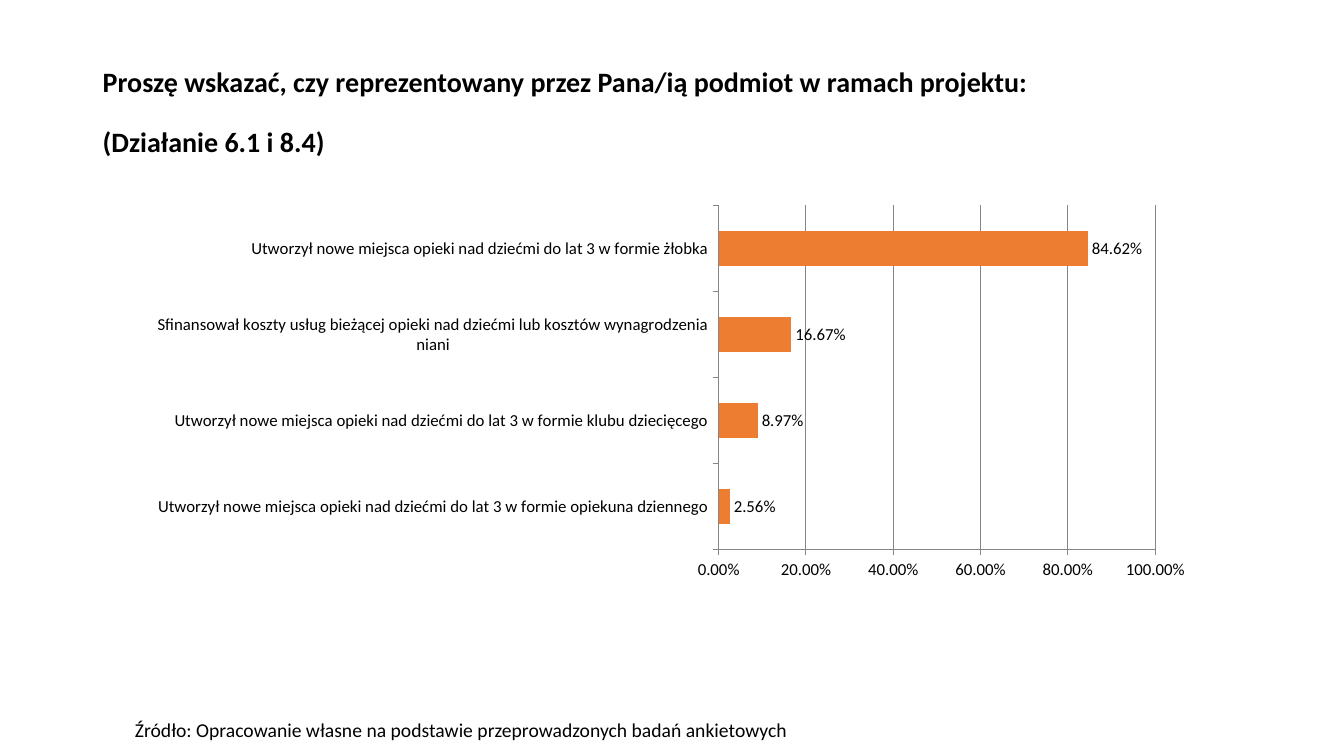
from lxml import etree
from pptx import Presentation
from pptx.chart.data import CategoryChartData
from pptx.dml.color import RGBColor
from pptx.enum.chart import XL_CHART_TYPE, XL_LABEL_POSITION, XL_TICK_MARK
from pptx.enum.text import MSO_ANCHOR
from pptx.oxml.ns import qn
from pptx.util import Inches, Pt

BAR_CLUSTERED = XL_CHART_TYPE.BAR_CLUSTERED
OUTSIDE_END = XL_LABEL_POSITION.OUTSIDE_END
TICK_OUTSIDE = XL_TICK_MARK.OUTSIDE
ANCHOR_TOP, ANCHOR_MIDDLE = MSO_ANCHOR.TOP, MSO_ANCHOR.MIDDLE

FONT = "Calibri"
BLACK, ORANGE, GREY = "000000", "ED7D31", "868686"
PERCENT = "0.00%"

TITLE = [
    "Proszę wskazać, czy reprezentowany przez Pana/ią podmiot w ramach projektu:",
    "(Działanie 6.1 i 8.4)",
]
SOURCE_NOTE = ["Źródło: Opracowanie własne na podstawie przeprowadzonych badań ankietowych"]
# Bars run from the bottom up
ANSWERS = {
    "Utworzył nowe miejsca opieki nad dziećmi do lat 3 w formie opiekuna dziennego": 0.0256,
    "Utworzył nowe miejsca opieki nad dziećmi do lat 3 w formie klubu dziecięcego": 0.0897,
    "Sfinansował koszty usług bieżącej opieki nad dziećmi lub kosztów wynagrodzenia niani": 0.1667,
    "Utworzył nowe miejsca opieki nad dziećmi do lat 3 w formie żłobka": 0.8462,
}
# Inner plot area as shares of the chart frame
PLOT_LAYOUT = {"x": 0.55, "y": 0.02, "w": 0.41, "h": 0.88}


def color(hex_code):
    return RGBColor.from_string(hex_code)


def style_font(font, size, bold=False):
    font.name = FONT
    font.size = Pt(size)
    font.bold = bold
    font.color.rgb = color(BLACK)


def add_text(page, left, top, width, height, lines, size,
             bold=False, anchor=ANCHOR_TOP, gap=0):
    box = page.shapes.add_textbox(Inches(left), Inches(top), Inches(width), Inches(height))
    frame = box.text_frame
    frame.word_wrap = True
    frame.vertical_anchor = anchor
    for index, line in enumerate(lines):
        para = frame.add_paragraph() if index else frame.paragraphs[0]
        para.text = line
        para.line_spacing = 0.9
        para.space_before = Pt(gap if index else 0)
        style_font(para.font, size, bold)


def set_plot_layout(chart):
    plot_area = chart.plots[0]._element.getparent()
    for old_layout in plot_area.findall(qn("c:layout")):
        plot_area.remove(old_layout)
    layout = etree.Element(qn("c:layout"))
    manual = etree.SubElement(layout, qn("c:manualLayout"))
    settings = {"layoutTarget": "inner", "xMode": "edge", "yMode": "edge", **PLOT_LAYOUT}
    for name, value in settings.items():
        etree.SubElement(manual, qn(f"c:{name}")).set("val", str(value))
    plot_area.insert(0, layout)


def style_line(line):
    line.color.rgb = color(GREY)
    line.width = Pt(0.75)


def style_axes(chart):
    for axis in (chart.category_axis, chart.value_axis):
        axis.major_tick_mark = TICK_OUTSIDE
        style_line(axis.format.line)
    chart.category_axis.has_major_gridlines = False
    scale = chart.value_axis
    scale.minimum_scale, scale.maximum_scale, scale.major_unit = 0, 1, 0.2
    scale.has_major_gridlines = True
    style_line(scale.major_gridlines.format.line)
    scale.tick_labels.number_format = PERCENT
    scale.tick_labels.number_format_is_linked = False


def add_bar_chart(page, left, top, width, height, answers):
    data = CategoryChartData(number_format=PERCENT)
    data.categories = answers.keys()
    data.add_series("Series 1", answers.values())
    chart = page.shapes.add_chart(BAR_CLUSTERED, Inches(left), Inches(top),
                                  Inches(width), Inches(height), data).chart
    chart.has_legend = False
    chart.has_title = False
    style_font(chart.font, 12)
    set_plot_layout(chart)
    style_axes(chart)

    # Bars and their value labels
    plot = chart.plots[0]
    plot.gap_width = 150
    plot.vary_by_categories = False
    fill = plot.series[0].format.fill
    fill.solid()
    fill.fore_color.rgb = color(ORANGE)
    plot.has_data_labels = True
    labels = plot.data_labels
    labels.show_value = True
    labels.position = OUTSIDE_END
    labels.number_format = PERCENT
    labels.number_format_is_linked = False
    style_font(labels.font, 12)


def main():
    deck = Presentation()
    deck.slide_width, deck.slide_height = Inches(13.33), Inches(7.5)
    page = deck.slides.add_slide(deck.slide_layouts[6])

    # Question
    add_text(page, 0.92, 0.4, 11.5, 1.45, TITLE, 20,
             bold=True, anchor=ANCHOR_MIDDLE, gap=21)
    # Source note
    add_text(page, 1.24, 7.1, 11.5, 0.4, SOURCE_NOTE, 14)
    # Shares of answers
    add_bar_chart(page, 1.32, 1.96, 10.56, 3.88, ANSWERS)

    deck.save("out.pptx")


if __name__ == "__main__":
    main()
